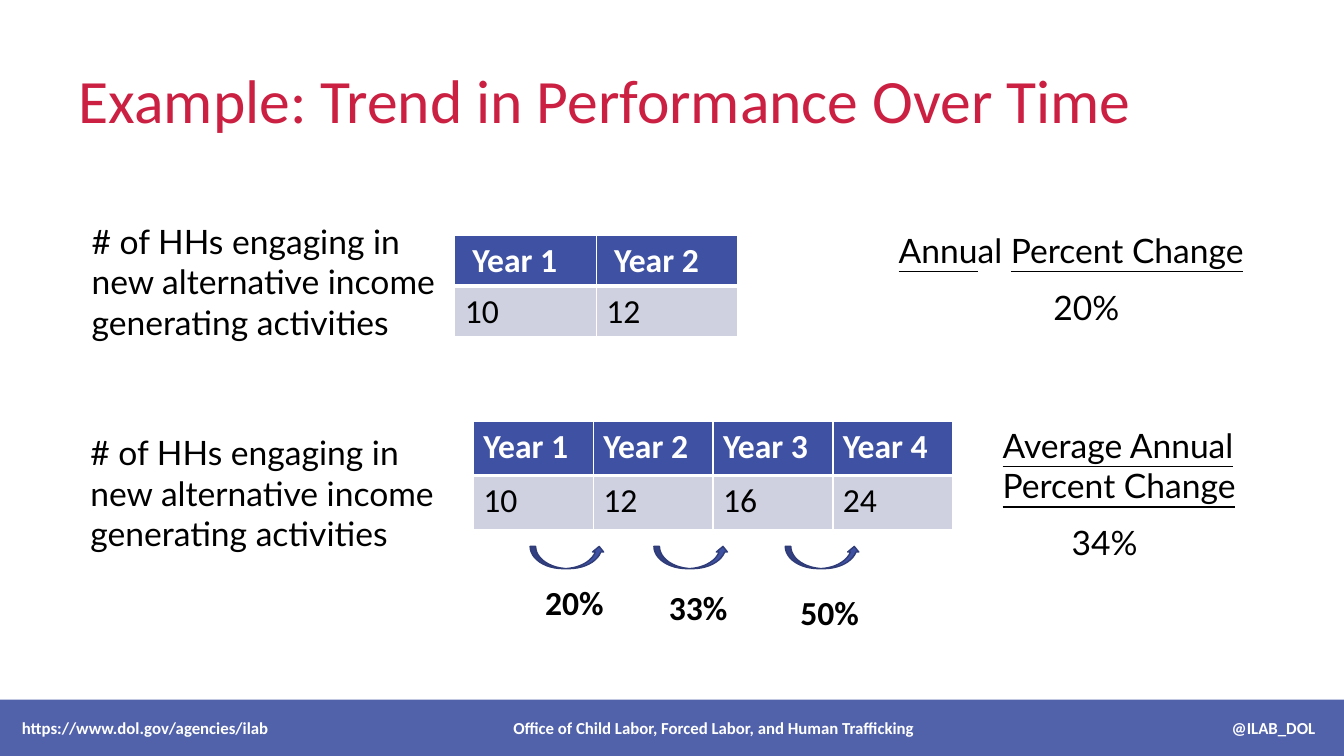
from lxml.etree import SubElement
from pptx import Presentation
from pptx.dml.color import RGBColor
from pptx.enum.shapes import MSO_SHAPE
from pptx.enum.text import MSO_ANCHOR, MSO_AUTO_SIZE, PP_ALIGN
from pptx.oxml.ns import qn
from pptx.util import Cm, Pt

BLUE, NAVY, RED = "3F51A2", "2F3C78", "CB2042"
PALE, WHITE, BLACK = "CFD0E0", "FFFFFF", "000000"
INDICATOR = "# of HHs engaging in new alternative income generating activities"


def paint(color_format, hex_color):
    color_format.rgb = RGBColor.from_string(hex_color)


def fill_solid(fill, hex_color):
    fill.solid()
    paint(fill.fore_color, hex_color)


def add_run(paragraph, text, size=24, font="Calibri", color=BLACK, bold=False, underline=False):
    run = paragraph.add_run()
    run.text = text
    run.font.size = Pt(size)
    run.font.name = font
    run.font.bold = bold
    run.font.underline = underline
    paint(run.font.color, color)


def add_text_frame(shapes, left, top, width, height):
    frame = shapes.add_textbox(Cm(left), Cm(top), Cm(width), Cm(height)).text_frame
    frame.word_wrap = True
    return frame


def add_title(slide, text):
    title = slide.shapes.title
    title.left, title.top, title.width, title.height = Cm(1.73), Cm(0.76), Cm(29.21), Cm(3.68)
    frame = title.text_frame
    frame.auto_size = MSO_AUTO_SIZE.NONE
    frame.vertical_anchor = MSO_ANCHOR.MIDDLE
    heading = frame.paragraphs[0]
    heading.alignment = PP_ALIGN.LEFT
    heading.line_spacing = 0.9
    add_run(heading, text, size=44, color=RED)


def add_indicator(slide, left, top):
    frame = add_text_frame(slide.shapes, left, top, 9.43, 3.33)
    add_run(frame.paragraphs[0], INDICATOR, font="Lato")


def add_result_line(frame, text):
    result = frame.add_paragraph()
    result.space_before = Pt(12)
    add_run(result, text, font="Lato")
    return result


def add_borders(cell, bottom_width):
    properties = cell._tc.get_or_add_tcPr()
    for side, width in (("L", 1), ("R", 1), ("T", 1), ("B", bottom_width)):
        line = SubElement(properties, qn(f"a:ln{side}"), w=str(Pt(width)))
        solid = SubElement(line, qn("a:solidFill"))
        SubElement(solid, qn("a:srgbClr"), val=WHITE)


def add_year_table(slide, left, top, column_width, row_height, years, values):
    size = Cm(column_width * len(years)), Cm(row_height * 2)
    table = slide.shapes.add_table(2, len(years), Cm(left), Cm(top), *size).table
    for column in table.columns:
        column.width = Cm(column_width)
    for row_number, texts in enumerate((years, values)):
        is_header = row_number == 0
        table.rows[row_number].height = Cm(row_height)
        for column_number, text in enumerate(texts):
            cell = table.cell(row_number, column_number)
            add_borders(cell, 3 if is_header else 1)
            fill_solid(cell.fill, BLUE if is_header else PALE)
            add_run(cell.text_frame.paragraphs[0], text,
                    color=WHITE if is_header else BLACK, bold=is_header)


def add_yearly_change(slide, left, label_top, percent):
    change = slide.shapes.add_group_shape().shapes
    arrow = change.add_shape(MSO_SHAPE.CURVED_UP_ARROW, Cm(left), Cm(13.77), Cm(1.88), Cm(0.56))
    arrow.shadow.inherit = False
    fill_solid(arrow.fill, BLUE)
    paint(arrow.line.color, NAVY)
    arrow.line.width = Pt(1)
    label = add_text_frame(change, left + 0.13, label_top, 2.77, 1.27)
    add_run(label.paragraphs[0], percent, bold=True)


def add_footer(slide, address, office, handle):
    band = slide.shapes.add_shape(MSO_SHAPE.RECTANGLE, 0, Cm(17.63), Cm(33.96), Cm(1.42))
    band.shadow.inherit = False
    band.line.fill.background()
    fill_solid(band.fill, BLUE)
    # Slight transparency
    band_color = band._element.spPr.find(qn("a:solidFill")).find(qn("a:srgbClr"))
    SubElement(band_color, qn("a:alpha"), val="90000")
    frame = band.text_frame
    frame.margin_left = Cm(0.55)
    frame.vertical_anchor = MSO_ANCHOR.MIDDLE
    credits = frame.paragraphs[0]
    credits.alignment = PP_ALIGN.LEFT
    # Centre and right tab stops
    tabs = SubElement(credits._p.get_or_add_pPr(), qn("a:tabLst"))
    for position, alignment in ((17.44, "ctr"), (32.6, "r")):
        SubElement(tabs, qn("a:tab"), pos=str(Cm(position)), algn=alignment)
    add_run(credits, f"{address}\t{office}\t{handle}", size=12, color=WHITE, bold=True)


def main():
    deck = Presentation()
    deck.slide_width, deck.slide_height = Cm(33.87), Cm(19.05)
    slide = deck.slides.add_slide(deck.slide_layouts[5])
    add_title(slide, "Example: Trend in Performance Over Time")

    # Two-year example
    add_indicator(slide, 2.06, 5.44)
    add_year_table(slide, 11.46, 5.94, 3.57, 1.27, [" Year 1", " Year 2"], ["10", "12"])
    annual = add_text_frame(slide.shapes, 22.4, 5.66, 9.96, 2.82)
    for text, underlined in (("Annu", True), ("al ", False), ("Percent Change", True)):
        add_run(annual.paragraphs[0], text, font="Lato", underline=underlined)
    add_result_line(annual, "20%").alignment = PP_ALIGN.CENTER

    # Four-year example
    add_indicator(slide, 2.03, 10.77)
    add_year_table(slide, 11.93, 10.62, 3.02, 1.36,
                   [f"Year {number}" for number in range(1, 5)], ["10", "12", "16", "24"])
    average = add_text_frame(slide.shapes, 25.02, 10.57, 9.45, 3.84)
    average_heading = average.paragraphs[0]
    add_run(average_heading, "Average Annual", font="Lato", underline=True)
    average_heading.add_line_break()
    add_run(average_heading, "Percent Change", font="Lato", underline=True)
    average_result = add_result_line(average, "34%")
    average_result._p.get_or_add_pPr().set("marL", str(Cm(1.74)))

    # Change from each year to the next
    changes = ((13.36, "20%"), (16.48, "33%"), (19.79, "50%"))
    for step, (left, percent) in enumerate(changes):
        add_yearly_change(slide, left, 14.55 + 0.12 * step, percent)

    add_footer(slide, "https://www.dol.gov/agencies/ilab",
               "Office of Child Labor, Forced Labor, and Human Trafficking", "@ILAB_DOL")
    deck.save("out.pptx")


if __name__ == "__main__":
    main()
